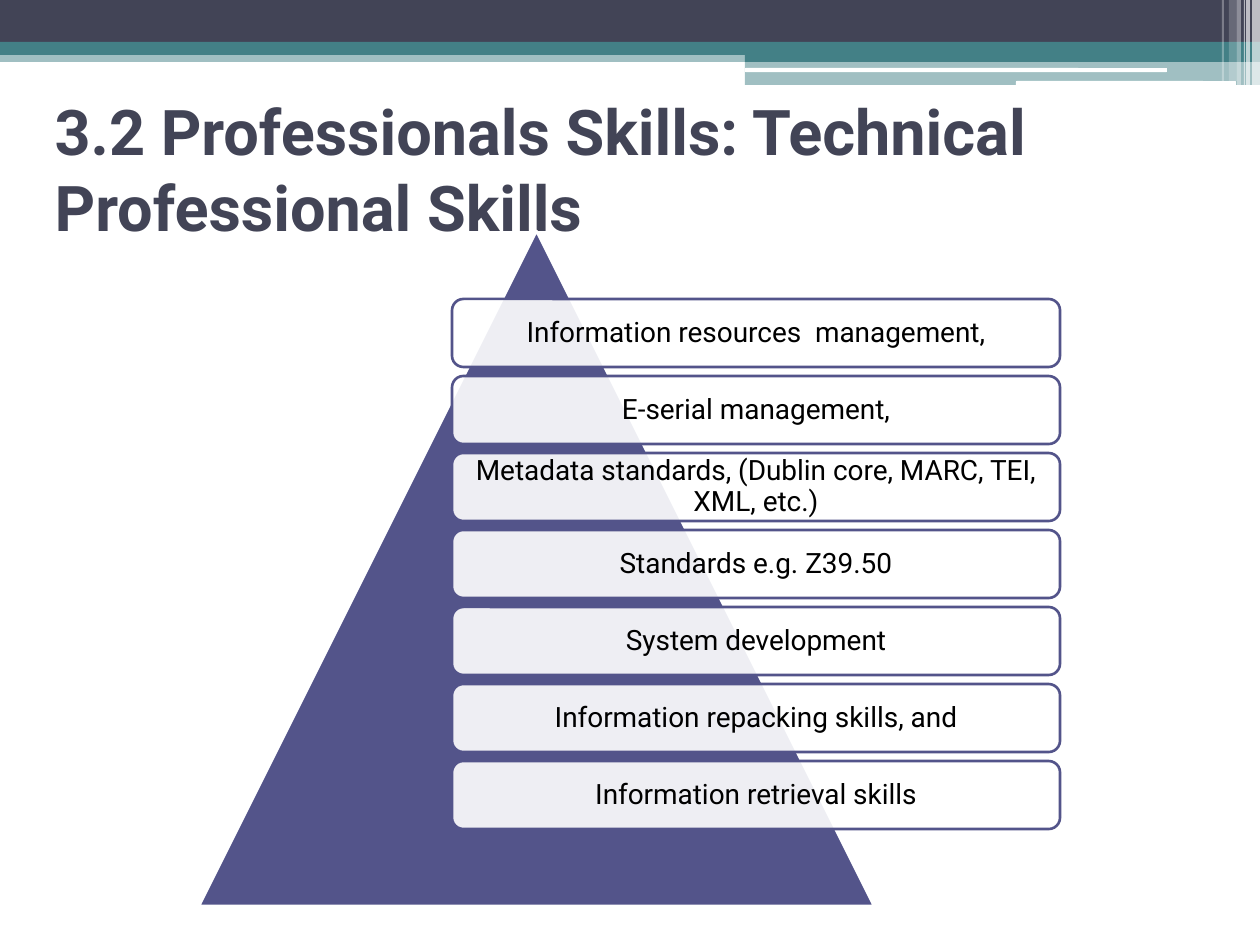
from dataclasses import dataclass

from lxml import etree
from pptx import Presentation
from pptx.dml.color import RGBColor
from pptx.enum.shapes import MSO_SHAPE
from pptx.enum.text import MSO_ANCHOR, MSO_AUTO_SIZE, PP_ALIGN
from pptx.oxml.ns import qn
from pptx.util import Pt

RECT = MSO_SHAPE.RECTANGLE
ROUND = MSO_SHAPE.ROUNDED_RECTANGLE
CONE = MSO_SHAPE.ISOSCELES_TRIANGLE
LEFT, CENTER = PP_ALIGN.LEFT, PP_ALIGN.CENTER
MIDDLE = MSO_ANCHOR.MIDDLE
NO_FIT = MSO_AUTO_SIZE.NONE

SCALE = 914400 / 126
FONT = "Roboto"
NAVY, TEAL, VIOLET = "424456", "438086", "53548A"
WHITE, BLACK = "FFFFFF", "000000"

TITLE = "3.2 Professionals Skills: Technical Professional Skills"
SKILLS = (
    "Information resources  management,",
    "E-serial management,",
    "Metadata standards, (Dublin core, MARC, TEI, XML, etc.)",
    "Standards e.g. Z39.50",
    "System development",
    "Information repacking skills, and",
    "Information retrieval skills",
)
CARD_TOP, CARD_STEP = 299, 77


@dataclass
class Item:
    left: int
    top: int
    width: int
    height: int
    fill: str
    alpha: int = 100
    kind: int = RECT
    line: str = ""


BANDS = (
    Item(0, 50, 1260, 12, TEAL, 50),
    Item(0, 0, 1260, 42, NAVY),
    Item(0, 42, 1260, 13, TEAL),
    Item(745, 49, 515, 13, TEAL),
    Item(745, 62, 515, 23, TEAL, 50),
    Item(745, 68, 422, 4, WHITE, kind=ROUND),
    Item(1016, 81, 220, 5, WHITE, kind=ROUND),
)
# Left, width, height and opacity of each stripe at the right edge
STRIPES = (
    (1252, 8, 85, 65), (1246, 4, 85, 65), (1244, 1, 85, 60),
    (1237, 4, 85, 40), (1229, 8, 81, 20), (1222, 2, 81, 30),
)


def px(value: int) -> int:
    return round(value * SCALE)


def color(code: str) -> RGBColor:
    return RGBColor.from_string(code)


def style(target, values: dict) -> None:
    for name, value in values.items():
        setattr(target, name, value)


def draw(slide, item: Item):
    box = map(px, (item.left, item.top, item.width, item.height))
    shape = slide.shapes.add_shape(item.kind, *box)
    shape.shadow.inherit = False
    shape.fill.solid()
    shape.fill.fore_color.rgb = color(item.fill)
    if item.alpha < 100:
        tone = shape.fill._xPr.find(qn("a:solidFill"))[0]
        etree.SubElement(tone, qn("a:alpha"), val=str(item.alpha * 1000))
    if item.line:
        shape.line.color.rgb = color(item.line)
        shape.line.width = Pt(1.5)
    else:
        shape.line.fill.background()
    return shape


def write(shape, text: str, size: int, tone: str, bold: bool,
          frame: dict, para: dict) -> None:
    body = shape.text_frame
    body.text = text
    style(body, {"word_wrap": True, "auto_size": NO_FIT,
                 "vertical_anchor": MIDDLE, **frame})
    line = body.paragraphs[0]
    style(line, para)
    font = line.runs[0].font
    style(font, {"name": FONT, "size": Pt(size), "bold": bold})
    font.color.rgb = color(tone)


def main() -> None:
    deck = Presentation()
    style(deck, {"slide_width": px(1260), "slide_height": px(945)})
    slide = deck.slides.add_slide(deck.slide_layouts[5])

    for band in BANDS:
        draw(slide, band)
    for left, width, height, alpha in STRIPES:
        draw(slide, Item(left, 0, width, height, WHITE, alpha))

    title = slide.shapes.title
    style(title, {"left": px(42), "top": px(95),
                  "width": px(1134), "height": px(147)})
    write(title, TITLE, 36, NAVY, True, {}, {"alignment": LEFT})

    draw(slide, Item(199, 231, 675, 675, VIOLET, kind=CONE, line=WHITE))
    sides = ("left", "right", "top", "bottom")
    inset = {f"margin_{side}": px(6) for side in sides}
    para = {"alignment": CENTER, "line_spacing": 0.9}
    for row, skill in enumerate(SKILLS):
        top = CARD_TOP + row * CARD_STEP
        card = draw(slide, Item(452, top, 608, 68, WHITE, 90, ROUND, VIOLET))
        write(card, skill, 16, BLACK, False, inset, para)

    deck.save("out.pptx")


if __name__ == "__main__":
    main()
